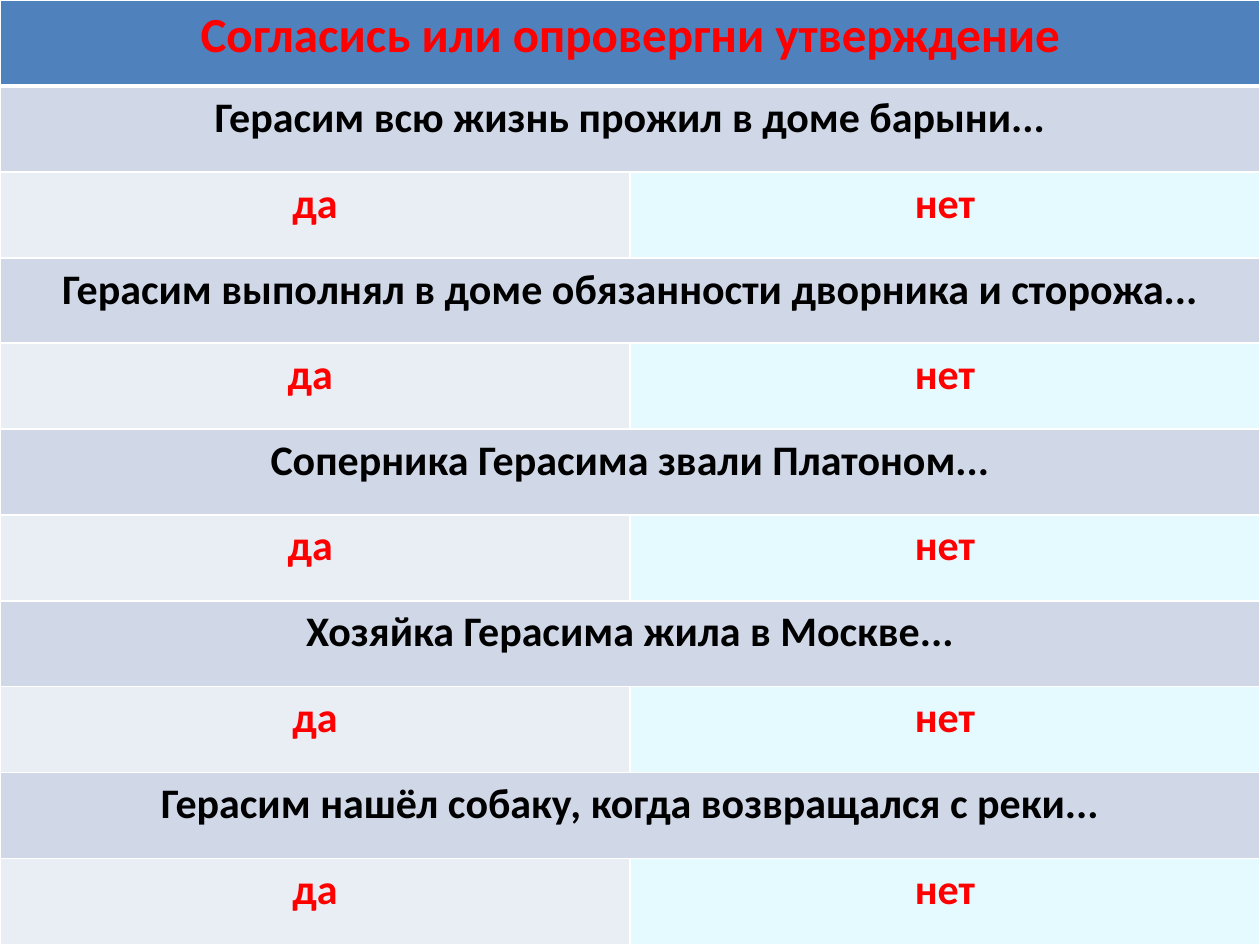
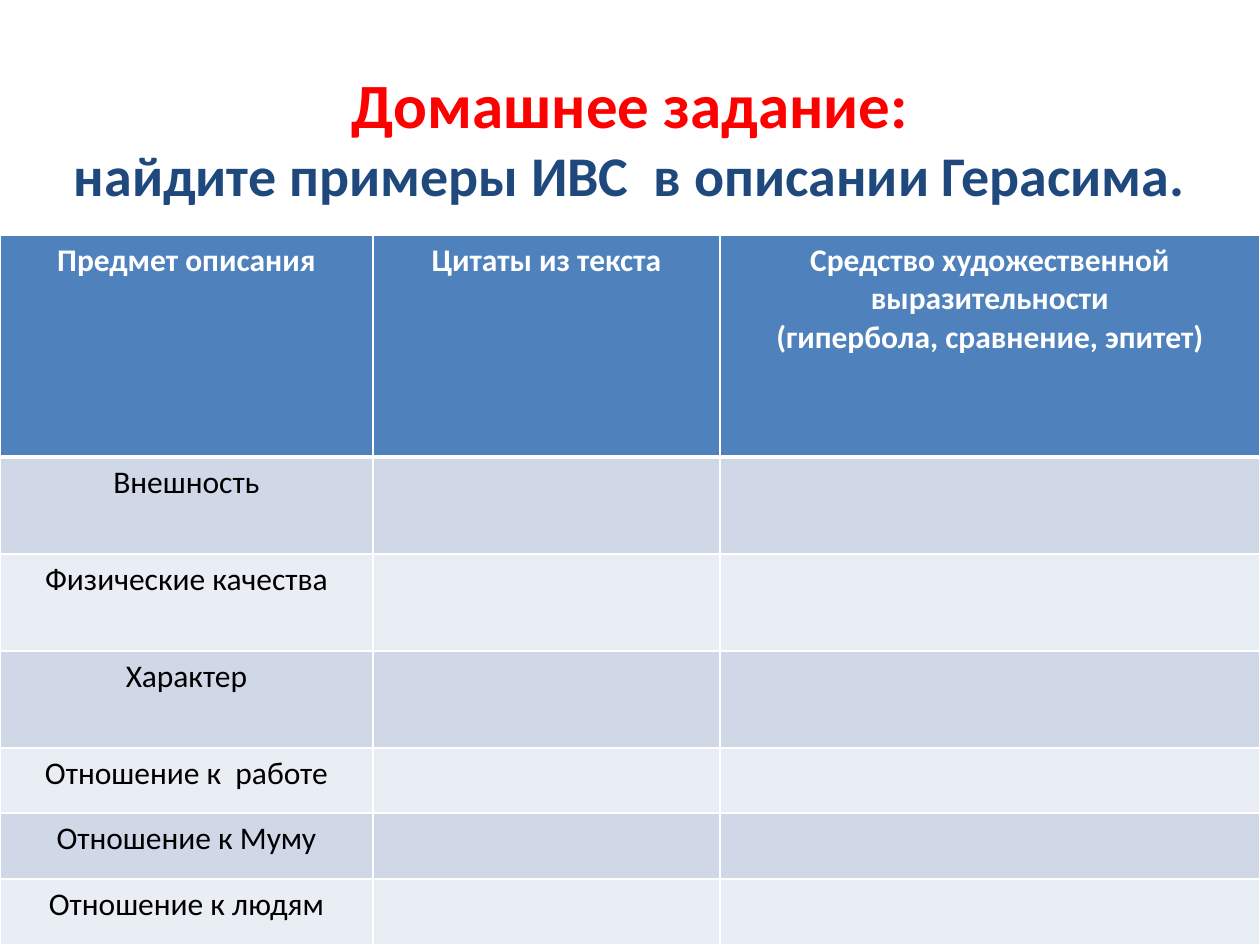
from lxml.etree import SubElement
from pptx import Presentation
from pptx.dml.color import RGBColor
from pptx.enum.text import MSO_ANCHOR, MSO_AUTO_SIZE, PP_ALIGN
from pptx.oxml.ns import qn
from pptx.util import Emu, Pt

PX_PER_INCH = 126
SLIDE_W, SLIDE_H = 1260, 945
FONT = "Calibri"
BLUE, NAVY, RED = "4F81BD", "1F497D", "FF0000"
WHITE, BLACK = "FFFFFF", "000000"
BAND_DARK, BAND_LIGHT, AQUA = "D0D8E8", "E9EDF4", "E5FAFF"

QUIZ_TITLE = "Согласись или опровергни утверждение"
STATEMENTS = [
    ("Герасим всю жизнь прожил в доме барыни...", "да"),
    ("Герасим выполнял в доме обязанности дворника и сторожа...", "да "),
    ("Соперника Герасима звали Платоном...", "да "),
    ("Хозяйка Герасима жила в Москве...", "да"),
    ("Герасим нашёл собаку, когда возвращался с реки...", "да"),
]
HEADINGS = [
    ["Предмет описания"],
    ["Цитаты из текста"],
    ["Средство художественной выразительности", "(гипербола, сравнение, эпитет)"],
]
TOPICS = ["Внешность", "Физические качества", "Характер",
          "Отношение к  работе", "Отношение к Муму", "Отношение к людям"]


def px(n):
    """Turn whole pixels into EMU."""
    return Emu(round(n * 914400 / PX_PER_INCH))


def rgb(value):
    """Turn a hex string into a colour."""
    return RGBColor.from_string(value)


def add_run(p, text, size, color, bold=True):
    """Add one formatted run to a paragraph."""
    r = p.add_run()
    r.text = text
    r.font.name, r.font.size, r.font.bold = FONT, Pt(size), bold
    r.font.color.rgb = rgb(color)


def set_borders(cell, top, bottom):
    """Draw white cell borders with the given top and bottom widths."""
    tc_pr = cell._tc.get_or_add_tcPr()
    for side, width in (("L", 1), ("R", 1), ("T", top), ("B", bottom)):
        ln = SubElement(tc_pr, qn(f"a:ln{side}"), w=str(Pt(width)))
        fill = SubElement(ln, qn("a:solidFill"))
        SubElement(fill, qn("a:srgbClr"), val=WHITE)


def add_grid(slide, box, cols, rows):
    """Add a bordered, banded table with a header row."""
    table = slide.shapes.add_table(len(rows), len(cols), *map(px, box)).table
    for column, width in zip(table.columns, cols):
        column.width = px(width)
    for i, height in enumerate(rows):
        table.rows[i].height = px(height)
        for cell in table.rows[i].cells:
            set_borders(cell, 3 if i == 1 else 1, 3 if i == 0 else 1)
            fill_cell(cell, BLUE if i == 0 else BAND_DARK if i % 2 else BAND_LIGHT)
    return table


def fill_cell(cell, color):
    """Give a cell a solid fill."""
    cell.fill.solid()
    cell.fill.fore_color.rgb = rgb(color)


def write_cell(cell, lines, size, color, bold=True):
    """Write centred paragraphs into a cell."""
    tf = cell.text_frame
    for i, line in enumerate(lines):
        p = tf.add_paragraph() if i else tf.paragraphs[0]
        p.alignment = PP_ALIGN.CENTER
        add_run(p, line, size, color, bold)


def add_quiz_table(slide, box):
    """Place the statements, each above its yes and no answers."""
    rows = [86] * 11
    rows[3] = 85
    table = add_grid(slide, box, [box[2] // 2] * 2, rows)
    for i in (0, *range(1, len(rows), 2)):
        table.cell(i, 0).merge(table.cell(i, 1))
    write_cell(table.cell(0, 0), [QUIZ_TITLE], 28, RED)
    for i, (statement, yes) in enumerate(STATEMENTS):
        row = 2 * i + 1
        write_cell(table.cell(row, 0), [statement], 24, BLACK)
        write_cell(table.cell(row + 1, 0), [yes], 24, RED)
        write_cell(table.cell(row + 1, 1), ["нет"], 24, RED)
        fill_cell(table.cell(row + 1, 1), AQUA)


def add_homework_title(slide, box):
    """Place the two-line title in its placeholder."""
    sp = slide.shapes.title
    sp.left, sp.top, sp.width, sp.height = map(px, box)
    tf = sp.text_frame
    tf.word_wrap, tf.auto_size = True, MSO_AUTO_SIZE.NONE
    tf.vertical_anchor = MSO_ANCHOR.MIDDLE
    p = tf.paragraphs[0]
    p.alignment = PP_ALIGN.CENTER
    add_run(p, "Домашнее задание:", 36, RED)
    p.add_line_break()
    add_run(p, "найдите примеры ИВС  в описании Герасима.", 32, NAVY)


def add_homework_table(slide, box):
    """Place the table to be filled in with quotations."""
    table = add_grid(slide, box, [373, 347, 540], [222, 97, 97, 97, 65, 66, 66])
    for cell, lines in zip(table.rows[0].cells, HEADINGS):
        write_cell(cell, lines, 18, WHITE)
    for i, topic in enumerate(TOPICS, 1):
        write_cell(table.cell(i, 0), [topic], 18, BLACK, False)


def main():
    """Build both slides and save them."""
    prs = Presentation()
    prs.slide_width, prs.slide_height = px(SLIDE_W), px(SLIDE_H)
    title_only, blank = prs.slide_layouts[5], prs.slide_layouts[6]
    add_quiz_table(prs.slides.add_slide(blank), (0, 0, SLIDE_W, SLIDE_H))
    s = prs.slides.add_slide(title_only)
    add_homework_title(s, (0, 64, SLIDE_W, 145))
    add_homework_table(s, (0, 235, SLIDE_W, 710))
    prs.save("out.pptx")


if __name__ == "__main__":
    main()
